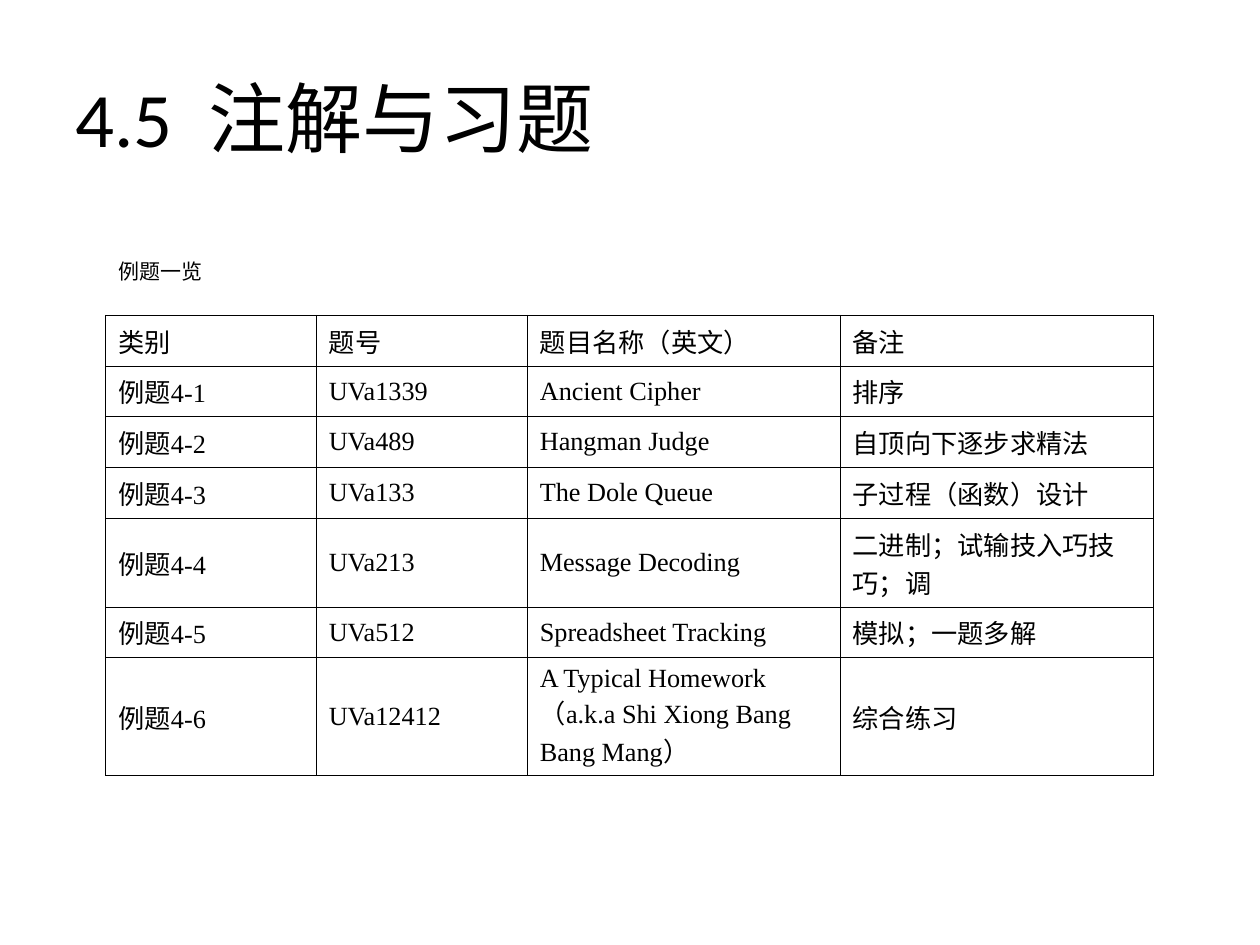
from lxml import etree
from pptx import Presentation
from pptx.dml.color import RGBColor
from pptx.enum import text
from pptx.oxml import ns
from pptx.util import Pt

BLACK = RGBColor(0, 0, 0)
WHITE = RGBColor(255, 255, 255)
CHINESE = "Noto Sans Mono"
ENGLISH = "Times New Roman"

COLUMN_WIDTHS = [120.2, 120.6, 178.8, 179.2]
ROW_HEIGHTS = [28.5, 29, 29, 28.8, 50.8, 28.6, 67.3]
HEADINGS = ["类别", "题号", "题目名称（英文）", "备注"]
HOMEWORK = [
    ("A Typical Homework\n", ENGLISH),
    ("（", CHINESE),
    ("a.k.a Shi Xiong Bang\nBang Mang", ENGLISH),
    ("）", CHINESE),
]
EXAMPLES = [
    ("UVa1339", [("Ancient Cipher", ENGLISH)], "排序"),
    ("UVa489", [("Hangman Judge", ENGLISH)], "自顶向下逐步求精法"),
    ("UVa133", [("The Dole Queue", ENGLISH)], "子过程（函数）设计"),
    ("UVa213", [("Message Decoding", ENGLISH)], "二进制；试输技入巧技巧；调"),
    ("UVa512", [("Spreadsheet Tracking", ENGLISH)], "模拟；一题多解"),
    ("UVa12412", HOMEWORK, "综合练习"),
]


def add_runs(paragraph, pieces, size):
    for words, font_name in pieces:
        for index, line in enumerate(words.split("\n")):
            if index:
                paragraph.add_line_break()
            if line:
                run = paragraph.add_run()
                run.text = line
                run.font.name = font_name
                run.font.size = Pt(size)
                run.font.color.rgb = BLACK


def add_title(slide, words):
    title = slide.shapes.title
    title.left, title.top, title.width, title.height = Pt(36), Pt(21.6), Pt(648), Pt(90)
    title.text_frame.vertical_anchor = text.MSO_ANCHOR.MIDDLE
    heading = title.text_frame.paragraphs[0]
    heading.alignment = text.PP_ALIGN.LEFT
    add_runs(heading, [(words, "Calibri")], 44)


def add_caption(slide, words):
    caption = slide.shapes.add_textbox(Pt(60.5), Pt(144), Pt(63.4), Pt(72.7))
    caption.text_frame.word_wrap = False
    add_runs(caption.text_frame.paragraphs[0], [(words, "Arial")], 12)


def draw_borders(cell):
    properties = cell._tc.get_or_add_tcPr()
    for side in ("lnL", "lnR", "lnT", "lnB"):
        border = etree.SubElement(properties, ns.qn(f"a:{side}"), w=str(Pt(0.5)))
        fill = etree.SubElement(border, ns.qn("a:solidFill"))
        etree.SubElement(fill, ns.qn("a:srgbClr"), val=str(BLACK))


def fill_cell(cell, pieces):
    draw_borders(cell)
    cell.fill.solid()
    cell.fill.fore_color.rgb = WHITE
    cell.vertical_anchor = text.MSO_ANCHOR.MIDDLE
    add_runs(cell.text_frame.paragraphs[0], pieces, 15)


def add_examples(slide):
    rows = [[[(heading, CHINESE)] for heading in HEADINGS]]
    for number, (problem, name, remark) in enumerate(EXAMPLES, 1):
        rows.append([
            [("例题", CHINESE), (f"4-{number}", ENGLISH)],
            [(problem, ENGLISH)],
            name,
            [(remark, CHINESE)],
        ])
    examples = slide.shapes.add_table(
        len(rows), len(HEADINGS), Pt(60.5), Pt(180.2),
        Pt(sum(COLUMN_WIDTHS)), Pt(sum(ROW_HEIGHTS))).table
    examples.first_row = False
    examples.horz_banding = False
    for column, width in zip(examples.columns, COLUMN_WIDTHS):
        column.width = Pt(width)
    for row, height, contents in zip(examples.rows, ROW_HEIGHTS, rows):
        row.height = Pt(height)
        for cell, pieces in zip(row.cells, contents):
            fill_cell(cell, pieces)


def main():
    deck = Presentation()
    deck.slide_width, deck.slide_height = Pt(720), Pt(540)
    slide = deck.slides.add_slide(deck.slide_layouts[5])
    add_title(slide, "4.5  注解与习题")
    add_examples(slide)
    add_caption(slide, "例题一览")
    deck.save("out.pptx")


if __name__ == "__main__":
    main()
